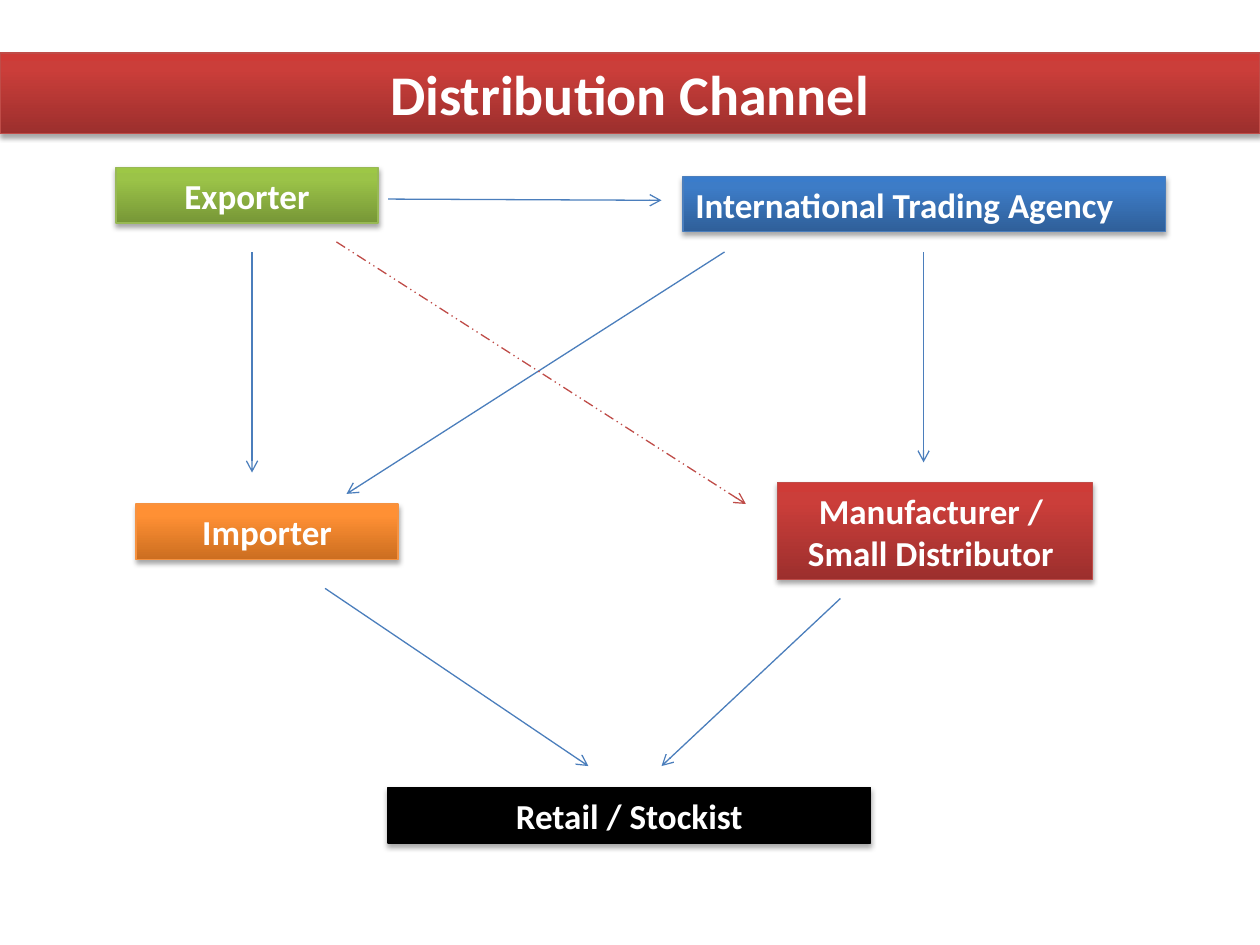
from copy import deepcopy

from lxml import etree
from pptx import Presentation
from pptx.dml.color import RGBColor
from pptx.enum.dml import MSO_LINE
from pptx.enum.shapes import MSO_CONNECTOR, MSO_SHAPE
from pptx.enum.text import MSO_ANCHOR, MSO_AUTO_SIZE, PP_ALIGN
from pptx.oxml.ns import qn
from pptx.util import Inches, Pt

RECTANGLE = MSO_SHAPE.RECTANGLE
STRAIGHT = MSO_CONNECTOR.STRAIGHT
DASH_DOT_DOT = MSO_LINE.DASH_DOT_DOT
MIDDLE = MSO_ANCHOR.MIDDLE
FIT_SHAPE = MSO_AUTO_SIZE.SHAPE_TO_FIT_TEXT
CENTER = PP_ALIGN.CENTER
LEFT = PP_ALIGN.LEFT

FONT = "Calibri"
STOP_POSITIONS = (0, 0.8, 1)
GREEN = (("779737", "9BC348", "9DC746"), "98B955")
BLUE = (("2F5F99", "3D7CC7", "3A7CCB"), "4B7EBC")
ORANGE = (("CC6E20", "FF9034", "FF9136"), "F69240")
RED = (("9C2F2D", "CB3E3A", "CE3B37"), "BF4C48")
BLACK = (("000000",), "000000")

PARTIES = [
    ("Exporter", (0.92, 1.33, 2.08, 0.44), GREEN, CENTER),
    ("International Trading Agency", (5.42, 1.4, 3.83, 0.44), BLUE, LEFT),
    ("Importer", (1.08, 4, 2.08, 0.44), ORANGE, CENTER),
    ("Manufacturer / \nSmall Distributor ", (6.17, 3.83, 2.5, 0.77), RED, CENTER),
    ("Retail / Stockist", (3.08, 6.25, 3.83, 0.44), BLACK, CENTER),
]
ROUTES = [
    ((2, 2), (2, 3.75)),
    ((5.75, 2), (2.75, 3.92)),
    ((3.08, 1.58), (5.25, 1.59)),
    ((7.33, 2), (7.33, 3.67)),
    ((2.58, 4.67), (4.67, 6.08)),
    ((6.67, 4.75), (5.25, 6.08)),
]
INDIRECT_ROUTE = ((2.67, 1.92), (5.92, 4))


def color(value):
    return RGBColor.from_string(value)


def write_text(frame, text, size=20, align=CENTER, ink="FFFFFF", bold=True):
    frame.word_wrap = True
    frame.auto_size = FIT_SHAPE
    frame.vertical_anchor = MIDDLE
    frame.text = text
    for paragraph in frame.paragraphs:
        paragraph.alignment = align
        for run in paragraph.runs:
            run.font.name = FONT
            run.font.size = Pt(size)
            run.font.bold = bold
            run.font.color.rgb = color(ink)


def fill_panel(panel, shades):
    if len(shades) == 1:
        panel.fill.solid()
        panel.fill.fore_color.rgb = color(shades[0])
        return
    panel.fill.gradient()
    panel.fill.gradient_angle = 90
    stop_list = panel.element.spPr.find(qn("a:gradFill")).find(qn("a:gsLst"))
    stop_list.append(deepcopy(stop_list[-1]))
    for stop, position, shade in zip(panel.fill.gradient_stops, STOP_POSITIONS, shades):
        stop.position = position
        stop.color.rgb = color(shade)


def add_soft_shadow(panel):
    panel.shadow.inherit = False
    effects = panel.element.spPr.find(qn("a:effectLst"))
    shadow = etree.SubElement(
        effects, qn("a:outerShdw"), blurRad=str(Pt(3.1)), dist=str(Pt(1.8)),
        dir="5400000", rotWithShape="0")
    black = etree.SubElement(shadow, qn("a:srgbClr"), val="000000")
    etree.SubElement(black, qn("a:alpha"), val="35000")


def add_panel(slide, text, box, palette, **text_format):
    shades, outline = palette
    panel = slide.shapes.add_shape(RECTANGLE, *(Inches(length) for length in box))
    fill_panel(panel, shades)
    panel.line.color.rgb = color(outline)
    panel.line.width = Pt(0.75)
    add_soft_shadow(panel)
    write_text(panel.text_frame, text, **text_format)


def add_route(slide, start, end, stroke=BLUE[1], dash=None):
    route = slide.shapes.add_connector(
        STRAIGHT, *(Inches(length) for length in start + end))
    route.line.color.rgb = color(stroke)
    route.line.width = Pt(0.75)
    if dash is not None:
        route.line.dash_style = dash
    properties = route.element.spPr
    etree.SubElement(properties.find(qn("a:ln")), qn("a:tailEnd"), type="arrow")
    etree.SubElement(properties, qn("a:effectLst"))


def main():
    deck = Presentation()
    deck.slide_width = Inches(10)
    deck.slide_height = Inches(7.5)
    slide = deck.slides.add_slide(deck.slide_layouts[6])
    for name, box, palette, align in PARTIES:
        add_panel(slide, name, box, palette, align=align)
    add_panel(slide, "Distribution Channel", (0, 0.42, 10, 0.64), RED, size=32)
    for start, end in ROUTES:
        add_route(slide, start, end)
    add_route(slide, *INDIRECT_ROUTE, stroke=RED[1], dash=DASH_DOT_DOT)
    deck.save("out.pptx")


if __name__ == "__main__":
    main()
